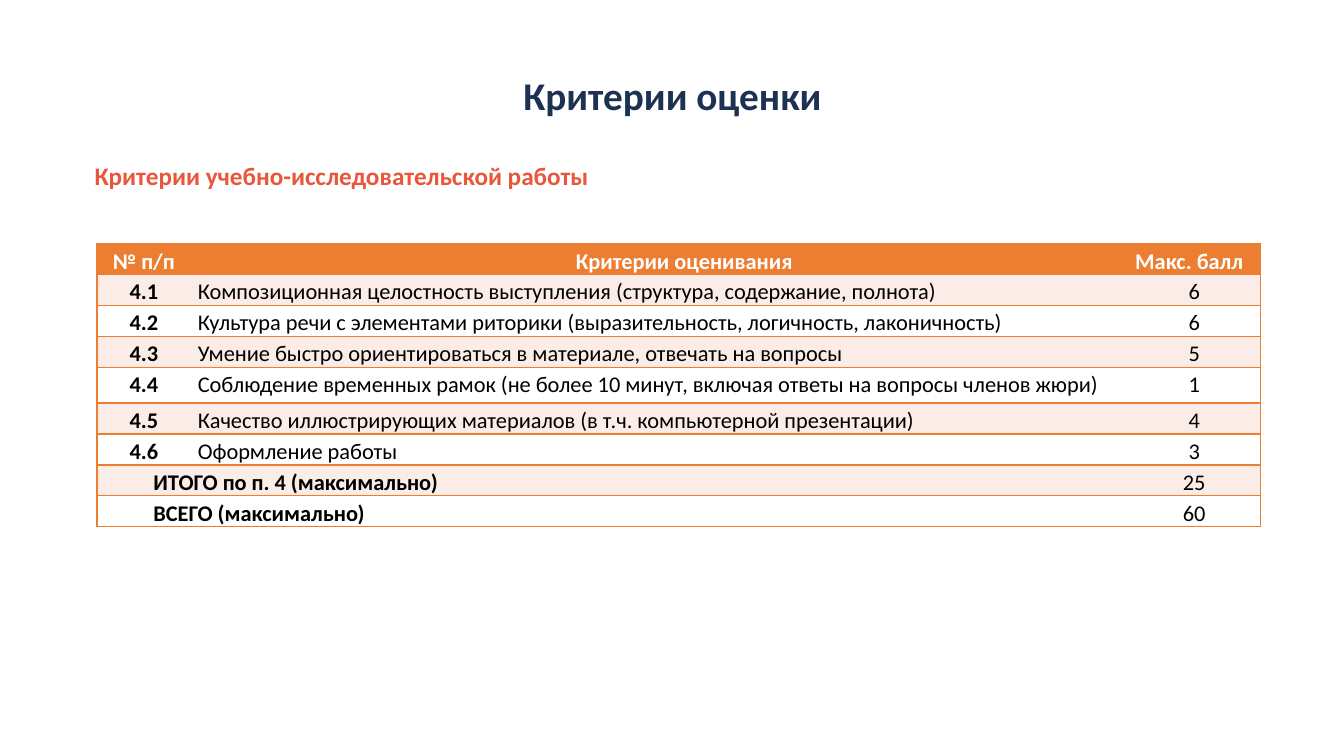
"""Builds the slide with the assessment criteria table."""
from dataclasses import dataclass

from lxml.etree import SubElement
from pptx import Presentation
from pptx.dml.color import RGBColor
from pptx.enum.text import MSO_ANCHOR, PP_ALIGN
from pptx.oxml.ns import qn
from pptx.slide import Slide
from pptx.table import _Cell
from pptx.text.text import _Paragraph
from pptx.util import Pt


@dataclass(frozen=True)
class Theme:
    """Colours, type sizes and spacing of the slide."""

    font: str = "Calibri"
    navy: str = "1D3152"
    coral: str = "E8573B"
    orange: str = "ED7D31"
    blush: str = "FCECE8"
    white: str = "FFFFFF"
    black: str = "000000"
    title_size: float = 28
    subtitle_size: float = 18
    table_size: float = 16
    line_spacing: float = 1.15
    indent: float = 35.3


@dataclass(frozen=True)
class Heading:
    """A line of text above the table."""

    text: str
    top: float
    height: float
    inset: float
    size: float
    color: str
    align: PP_ALIGN
    anchor: MSO_ANCHOR
    spacing: float


@dataclass(frozen=True)
class Criterion:
    """A numbered criterion with its highest score."""

    number: str
    wording: str
    score: str
    align: PP_ALIGN = PP_ALIGN.JUSTIFY
    height: float = 22


@dataclass(frozen=True)
class Total:
    """A summary row with its score."""

    label: str
    score: str
    height: float = 22


THEME = Theme()
HEADINGS = (
    Heading("Критерии оценки", 45.4, 45.4, 3.6, THEME.title_size, THEME.navy,
            PP_ALIGN.CENTER, MSO_ANCHOR.MIDDLE, 1.0),
    Heading("Критерии учебно-исследовательской работы", 108, 31, 7.2,
            THEME.subtitle_size, THEME.coral, PP_ALIGN.LEFT, MSO_ANCHOR.TOP,
            THEME.line_spacing),
)
COLUMN_WIDTHS = (67, 669.6, 94.3)
HEADER_HEIGHT = 22
CRITERIA = (
    Criterion("4.1", "Композиционная целостность выступления (структура, содержание, полнота)", "6"),
    Criterion("4.2", "Культура речи с элементами риторики (выразительность, логичность, лаконичность)", "6"),
    Criterion("4.3", "Умение быстро ориентироваться в материале, отвечать на вопросы", "5",
              align=PP_ALIGN.LEFT),
    Criterion("4.4", "Соблюдение временных рамок (не более 10 минут, включая ответы на вопросы членов жюри)", "1",
              height=25.6),
    Criterion("4.5", "Качество иллюстрирующих материалов (в т.ч. компьютерной презентации)", "4"),
    Criterion("4.6", "Оформление работы", "3"),
)
TOTALS = (
    Total("ИТОГО по п. 4 (максимально)", "25"),
    Total("ВСЕГО (максимально)", "60"),
)


def format_paragraph(paragraph: _Paragraph, size: float, color: str, bold: bool,
                     align: PP_ALIGN, spacing: float) -> None:
    """Set the alignment, spacing and font of a paragraph."""
    paragraph.alignment = align
    paragraph.line_spacing = spacing
    for run in paragraph.runs:
        run.font.name = THEME.font
        run.font.size = Pt(size)
        run.font.bold = bold
        run.font.color.rgb = RGBColor.from_string(color)


def add_heading(slide: Slide, heading: Heading) -> None:
    """Draw a heading across the slide."""
    box = slide.shapes.add_textbox(Pt(60.5), Pt(heading.top), Pt(839.5), Pt(heading.height))
    frame = box.text_frame
    frame.word_wrap = True
    frame.vertical_anchor = heading.anchor
    frame.margin_left = frame.margin_right = Pt(heading.inset)
    frame.margin_top = frame.margin_bottom = Pt(3.6)
    frame.text = heading.text
    format_paragraph(frame.paragraphs[0], heading.size, heading.color, True,
                     heading.align, heading.spacing)


def style_cell(cell: _Cell, column: int, fill: str) -> None:
    """Set the margins, borders and fill of a cell."""
    cell.margin_left = cell.margin_right = Pt(5)
    cell.margin_top = cell.margin_bottom = Pt(0)
    visible = {"a:lnL": column == 0, "a:lnR": column == len(COLUMN_WIDTHS) - 1,
               "a:lnT": True, "a:lnB": True}
    properties = cell._tc.get_or_add_tcPr()
    for side, shown in visible.items():
        line = SubElement(properties, qn(side), w=str(Pt(1)))
        if shown:
            paint = SubElement(line, qn("a:solidFill"))
            SubElement(paint, qn("a:srgbClr"), val=THEME.orange)
        else:
            SubElement(line, qn("a:noFill"))
    cell.fill.solid()
    cell.fill.fore_color.rgb = RGBColor.from_string(fill)


def write_cell(cell: _Cell, text: str, bold: bool, align: PP_ALIGN,
               color: str = THEME.black, indent_kind: str = "") -> None:
    """Write the text of a cell, with an optional paragraph indent."""
    cell.text_frame.text = text
    paragraph = cell.text_frame.paragraphs[0]
    if indent_kind:
        paragraph._p.get_or_add_pPr().set(indent_kind, str(Pt(THEME.indent)))
    format_paragraph(paragraph, THEME.table_size, color, bold, align, THEME.line_spacing)


def add_criteria_table(slide: Slide) -> None:
    """Draw the table of criteria and totals."""
    heights = [HEADER_HEIGHT, *(entry.height for entry in (*CRITERIA, *TOTALS))]
    frame = slide.shapes.add_table(len(heights), len(COLUMN_WIDTHS), Pt(69.3), Pt(174),
                                   Pt(sum(COLUMN_WIDTHS)), Pt(sum(heights)))
    table = frame.table
    table.first_row = table.horz_banding = False
    for column, width in zip(table.columns, COLUMN_WIDTHS):
        column.width = Pt(width)
    for index, height in enumerate(heights):
        table.rows[index].height = Pt(height)
        band = THEME.blush if index % 2 else THEME.white
        for column in range(len(COLUMN_WIDTHS)):
            style_cell(table.cell(index, column), column, band if index else THEME.orange)

    write_cell(table.cell(0, 0), "№ п/п", True, PP_ALIGN.CENTER, THEME.white)
    write_cell(table.cell(0, 1), "Критерии оценивания", True, PP_ALIGN.CENTER,
               THEME.white, "indent")
    write_cell(table.cell(0, 2), "Макс. балл", True, PP_ALIGN.LEFT, THEME.white)
    for index, criterion in enumerate(CRITERIA, start=1):
        write_cell(table.cell(index, 0), criterion.number, True, PP_ALIGN.CENTER)
        write_cell(table.cell(index, 1), criterion.wording, False, criterion.align)
        write_cell(table.cell(index, 2), criterion.score, False, PP_ALIGN.CENTER)
    for index, total in enumerate(TOTALS, start=len(CRITERIA) + 1):
        table.cell(index, 0).merge(table.cell(index, 1))
        write_cell(table.cell(index, 0), total.label, True, PP_ALIGN.LEFT, indent_kind="marL")
        write_cell(table.cell(index, 2), total.score, False, PP_ALIGN.CENTER)


def main() -> None:
    """Build and save the presentation."""
    presentation = Presentation()
    presentation.slide_width, presentation.slide_height = Pt(960), Pt(540)
    slide = presentation.slides.add_slide(presentation.slide_layouts[6])
    for heading in HEADINGS:
        add_heading(slide, heading)
    add_criteria_table(slide)
    presentation.save("out.pptx")


if __name__ == "__main__":
    main()
